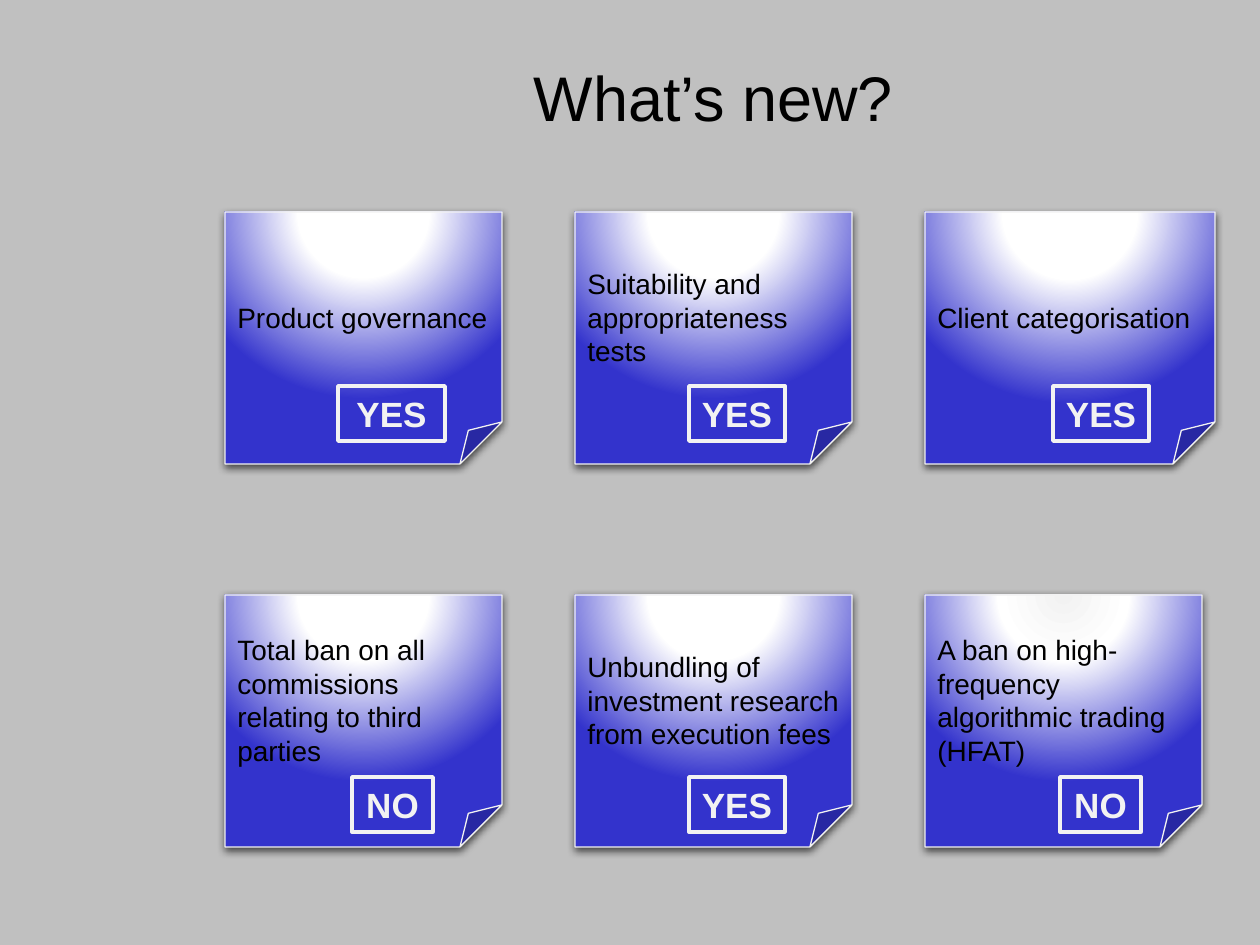
from dataclasses import dataclass

from lxml import etree
from pptx import Presentation
from pptx.dml.color import RGBColor
from pptx.enum.shapes import MSO_SHAPE
from pptx.enum.text import MSO_ANCHOR, MSO_AUTO_SIZE, PP_ALIGN
from pptx.oxml import parse_xml
from pptx.oxml.ns import qn
from pptx.util import Pt

NOTE, RECT = MSO_SHAPE.FOLDED_CORNER, MSO_SHAPE.RECTANGLE
TOP, MIDDLE = MSO_ANCHOR.TOP, MSO_ANCHOR.MIDDLE
LEFT, CENTER = PP_ALIGN.LEFT, PP_ALIGN.CENTER
GROW = MSO_AUTO_SIZE.SHAPE_TO_FIT_TEXT

SCALE = 914400 / 126
FONT = "Arial"
BLACK, WHITE, PALE, BLUE, GREY = "000000", "FFFFFF", "F2F2F2", "3333CC", "C0C0C0"
COLS, ROWS = (225, 575, 925), (212, 595)
MIDS, TAGS = (392, 737, 1101), (386, 777)
SIDE, HIGH, TALL = 277, 252, 55
NS = "http://schemas.openxmlformats.org/drawingml/2006/main"


@dataclass
class Card:
    text: str
    tag: str
    col: int
    row: int
    wide: int = SIDE
    span: int = 96
    glow: str = WHITE


CARDS = [
    Card("Product governance", "YES", 0, 0, span=107),
    Card("Suitability and appropriateness tests", "YES", 1, 0),
    Card("Client categorisation", "YES", 2, 0, wide=290),
    Card("Total ban on all commissions relating to third parties", "NO", 0, 1, span=81),
    Card("Unbundling of investment research from execution fees", "YES", 1, 1),
    Card("A ban on high-frequency algorithmic trading (HFAT)", "NO", 2, 1, span=81, glow=PALE),
]


def px(num: float) -> int:
    return round(num * SCALE)


def tint(code: str) -> RGBColor:
    return RGBColor.from_string(code)


def write(frame, text: str, size: int, code: str, align, anchor, bold: bool = False) -> None:
    frame.word_wrap = True
    frame.vertical_anchor = anchor
    para = frame.paragraphs[0]
    para.alignment = align
    run = para.add_run()
    run.text = text
    font = run.font
    font.name, font.size, font.bold = FONT, Pt(size), bold
    font.color.rgb = tint(code)


def add_box(slide, kind, left: int, top: int, wide: int, high: int, edge: float):
    box = slide.shapes.add_shape(kind, px(left), px(top), px(wide), px(high))
    box.shadow.inherit = False
    box.fill.background()
    box.line.color.rgb = tint(PALE)
    box.line.width = Pt(edge)
    return box


def add_glow(box, inner: str) -> None:
    """Fill a note with light that falls from above its top edge."""
    stops = "".join(
        f'<a:gs pos="{pos * 1000}"><a:srgbClr val="{code}"/></a:gs>'
        for pos, code in ((0, inner), (35, WHITE), (100, BLUE))
    )
    grad = parse_xml(
        f'<a:gradFill xmlns:a="{NS}" rotWithShape="1"><a:gsLst>{stops}</a:gsLst>'
        '<a:path path="circle"><a:fillToRect l="50000" t="-80000" r="50000" b="180000"/>'
        "</a:path></a:gradFill>"
    )
    props = box.element.spPr
    props.replace(props.find(qn("a:noFill")), grad)


def add_shade(box) -> None:
    shade = etree.SubElement(
        box.element.spPr.find(qn("a:effectLst")), qn("a:outerShdw"),
        blurRad=str(Pt(4.5)), dist=str(Pt(1.5)), dir="5400000", rotWithShape="0",
    )
    color = etree.SubElement(shade, qn("a:srgbClr"), val=BLACK)
    etree.SubElement(color, qn("a:alpha"), val="63000")


def add_card(slide, card: Card) -> None:
    # Note
    note = add_box(slide, NOTE, COLS[card.col], ROWS[card.row], card.wide, HIGH, 0.75)
    add_glow(note, card.glow)
    add_shade(note)
    write(note.text_frame, card.text, 16, BLACK, LEFT, MIDDLE)

    # Answer tag, centred on its column
    left = round(MIDS[card.col] - card.span / 2)
    tag = add_box(slide, RECT, left, TAGS[card.row], card.span, TALL, 2)
    write(tag.text_frame, card.tag, 20, PALE, CENTER, TOP, True)
    tag.text_frame.auto_size = GROW


def add_title(slide, text: str) -> None:
    box = slide.shapes.add_textbox(px(486), px(32), px(455), px(129))
    frame = box.text_frame
    frame.margin_left = frame.margin_right = px(14)
    frame.margin_top = frame.margin_bottom = px(8)
    write(frame, text, 36, BLACK, CENTER, MIDDLE)


def main() -> None:
    deck = Presentation()
    deck.slide_width, deck.slide_height = px(1260), px(945)
    slide = deck.slides.add_slide(deck.slide_layouts[6])
    slide.background.fill.solid()
    slide.background.fill.fore_color.rgb = tint(GREY)
    add_title(slide, "What’s new?")
    for card in CARDS:
        add_card(slide, card)
    deck.save("out.pptx")


if __name__ == "__main__":
    main()
